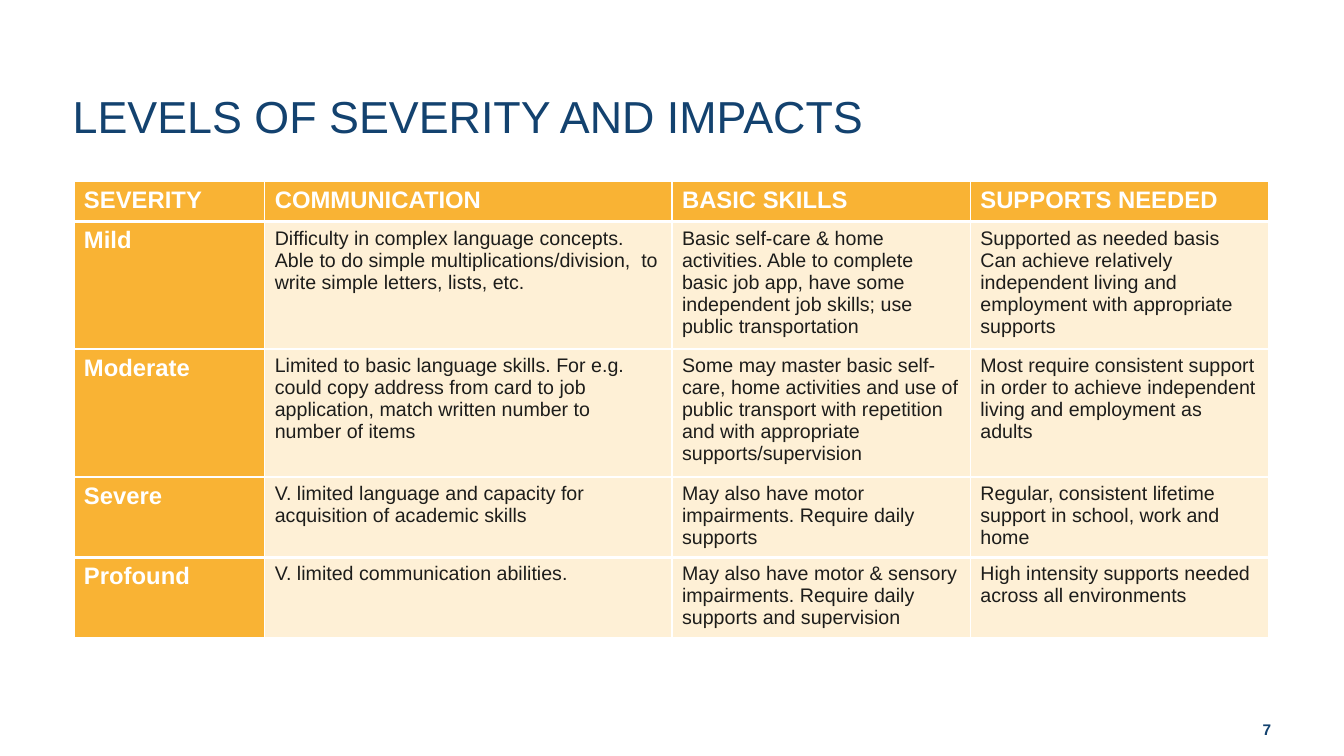
from itertools import accumulate

from lxml.etree import SubElement
from pptx import Presentation
from pptx.dml.color import RGBColor
from pptx.enum.text import MSO_ANCHOR, PP_ALIGN
from pptx.oxml.ns import qn
from pptx.util import Inches, Pt

NAVY = RGBColor(0x13, 0x42, 0x6F)
ORANGE = RGBColor(0xF9, 0xB3, 0x34)
CREAM = RGBColor(0xFE, 0xF0, 0xD6)
INK = RGBColor(0x1D, 0x1D, 0x1B)
WHITE = RGBColor(0xFF, 0xFF, 0xFF)

PAGE_WIDTH = Inches(13.33)
PAGE_HEIGHT = Inches(7.5)
TABLE_LEFT = 5.5
TABLE_TOP = 24
COLUMN_SHARES = [14.2, 30.3, 22.2, 22.2]
ROW_HEIGHTS = [5.4, 15.87, 15.87, 10.07, 10.07]
ROW_STEPS = [5.4, 16.87, 16.87, 10.67]
BORDERS = {"a:lnL": 1, "a:lnR": 1, "a:lnT": 1, "a:lnB": 3}

TITLE_FONT = {"name": "Arial", "size": Pt(32), "bold": False}
NUMBER_FONT = {"name": "Arial", "size": Pt(11), "bold": True}
LABEL_FONT = {"name": "Arial", "size": Pt(17), "bold": True}
BODY_FONT = {"name": "Arial", "size": Pt(14), "bold": False}

LEVELS = [
    ["SEVERITY", "COMMUNICATION", "BASIC SKILLS", "SUPPORTS NEEDED"],
    ["Mild",
     "Difficulty in complex language concepts.\n"
     "Able to do simple multiplications/division,  to write simple letters, lists, etc.",
     "Basic self-care & home activities. Able to complete basic job app, "
     "have some independent job skills; use public transportation",
     "Supported as needed basis\n"
     "Can achieve relatively independent living and employment with appropriate supports"],
    ["Moderate",
     "Limited to basic language skills. For e.g. could copy address from card to job "
     "application, match written number to number of items",
     "Some may master basic self-care, home activities and use of public transport "
     "with repetition and with appropriate supports/supervision",
     "Most require consistent support in order to achieve independent living "
     "and employment as adults"],
    ["Severe",
     "V. limited language and capacity for acquisition of academic skills",
     "May also have motor impairments. Require daily supports",
     "Regular, consistent lifetime support in school, work and home"],
    ["Profound",
     "V. limited communication abilities.",
     "May also have motor & sensory impairments. Require daily supports and supervision",
     "High intensity supports needed across all environments"],
]


def across(percent):
    return int(PAGE_WIDTH * percent / 100)


def down(percent):
    return int(PAGE_HEIGHT * percent / 100)


def set_values(target, values):
    for name, value in values.items():
        setattr(target, name, value)


def write_text(frame, text, font, color):
    frame.text = text
    for para in frame.paragraphs:
        set_values(para.font, font)
        para.font.color.rgb = color


def place(shape, left, top, width, height):
    set_values(shape, {"left": across(left), "top": down(top),
                       "width": across(width), "height": down(height)})


def set_frame(frame, insets, anchor, alignment, spacing):
    sides = ["margin_left", "margin_top", "margin_right", "margin_bottom"]
    set_values(frame, dict(zip(sides, map(Inches, insets))))
    set_values(frame, {"word_wrap": True, "vertical_anchor": anchor})
    set_values(frame.paragraphs[0], {"alignment": alignment, "line_spacing": Pt(spacing)})


def add_title(page):
    title = page.shapes.title
    place(title, 0.08, 9.87, 86.2, 11.73)
    write_text(title.text_frame, "LEVELS OF SEVERITY AND IMPACTS", TITLE_FONT, NAVY)
    set_frame(title.text_frame, [0.71, 0.05, 0.1, 0.05], MSO_ANCHOR.MIDDLE, PP_ALIGN.LEFT, 34)


def add_page_number(page):
    box = page.shapes.add_textbox(across(77.42), down(91.87), across(22.5), down(8))
    write_text(box.text_frame, "7", NUMBER_FONT, NAVY)
    set_frame(box.text_frame, [0, 0.05, 0.71, 0.16], MSO_ANCHOR.BOTTOM, PP_ALIGN.RIGHT, 13.3)


def add_borders(cell):
    properties = cell._tc.get_or_add_tcPr()
    for tag, width in BORDERS.items():
        line = SubElement(properties, qn(tag), w=str(Pt(width)))
        fill = SubElement(line, qn("a:solidFill"))
        SubElement(fill, qn("a:srgbClr"), val=str(WHITE))


def fill_cell(cell, text, is_label):
    add_borders(cell)
    cell.fill.solid()
    cell.fill.fore_color.rgb = ORANGE if is_label else CREAM
    font, color = (LABEL_FONT, WHITE) if is_label else (BODY_FONT, INK)
    write_text(cell.text_frame, text, font, color)


def add_level(page, texts, top, height, is_header):
    frame = page.shapes.add_table(1, len(texts), across(TABLE_LEFT), down(top),
                                  across(sum(COLUMN_SHARES)), down(height))
    table = frame.table
    set_values(table, {"first_row": False, "horz_banding": False})
    for index, (text, share) in enumerate(zip(texts, COLUMN_SHARES)):
        table.columns[index].width = across(share)
        fill_cell(table.cell(0, index), text, is_header or index == 0)


def main():
    deck = Presentation()
    set_values(deck, {"slide_width": PAGE_WIDTH, "slide_height": PAGE_HEIGHT})
    page = deck.slides.add_slide(deck.slide_layouts[5])
    add_page_number(page)
    add_title(page)
    tops = accumulate(ROW_STEPS, initial=TABLE_TOP)
    for index, (texts, top, height) in enumerate(zip(LEVELS, tops, ROW_HEIGHTS)):
        add_level(page, texts, top, height, index == 0)
    deck.save("out.pptx")


if __name__ == "__main__":
    main()
